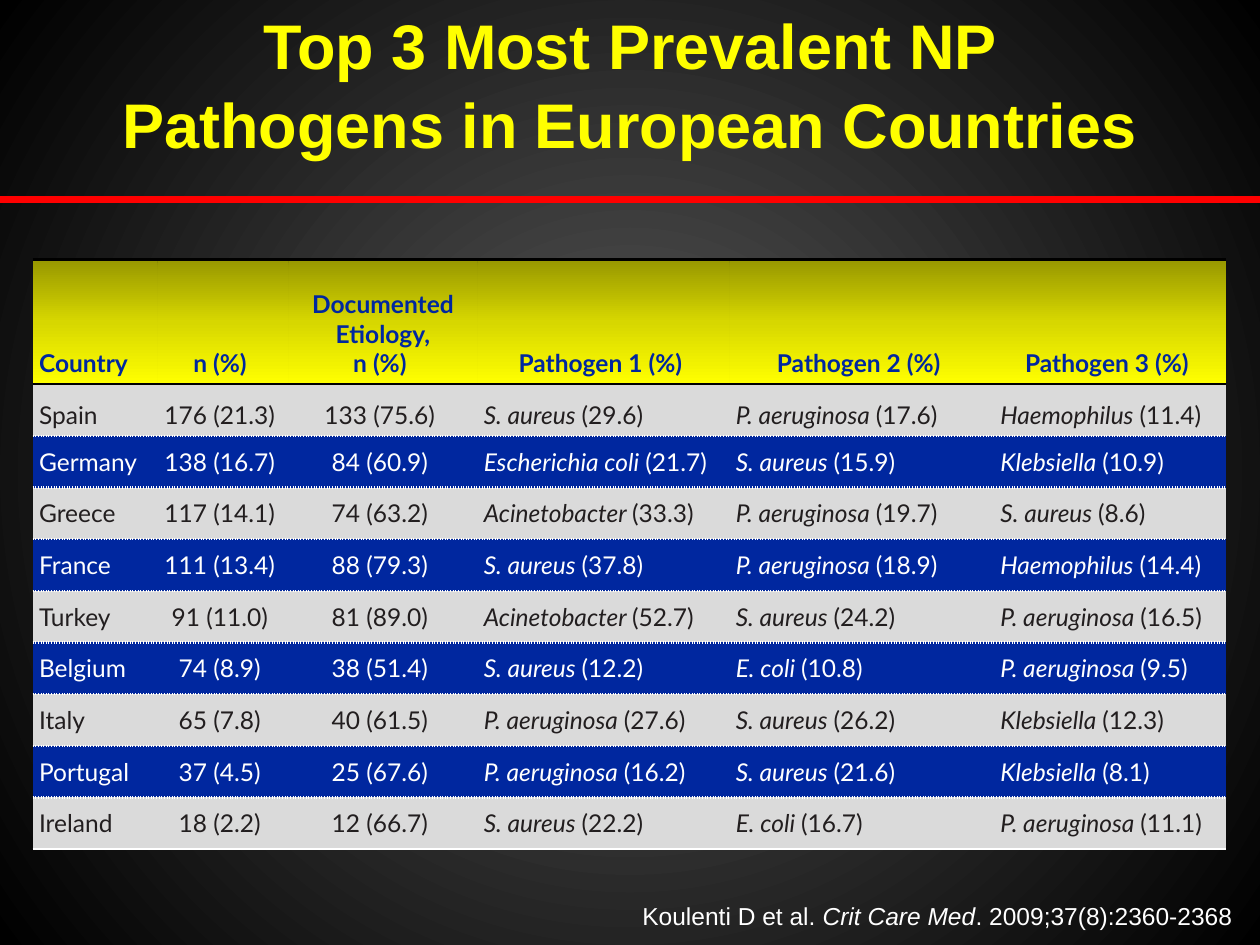
from lxml import etree
from pptx import Presentation
from pptx.dml.color import RGBColor
from pptx.enum.shapes import MSO_CONNECTOR
from pptx.enum.text import MSO_ANCHOR, MSO_AUTO_SIZE, PP_ALIGN
from pptx.oxml import parse_xml
from pptx.oxml.ns import nsdecls, qn
from pptx.util import Inches, Pt

LEFT, CENTER = PP_ALIGN.LEFT, PP_ALIGN.CENTER
BOTTOM, MIDDLE = MSO_ANCHOR.BOTTOM, MSO_ANCHOR.MIDDLE
NO_FIT = MSO_AUTO_SIZE.NONE
STRAIGHT = MSO_CONNECTOR.STRAIGHT

THEME = {
    "yellow": "FFFF00", "red": "FF0000", "white": "FFFFFF", "black": "000000",
    "blue": "00279F", "gray": "DADADA", "ink": "221E1F",
    "back": [(0, "595959"), (100, "000000")],
    "head": [(0, "979700"), (50, "D7D700"), (100, "FFFF00")],
    "font": "Arial", "grid_font": "Lato", "title": 36, "text": 14,
}

TITLE = "Top 3 Most Prevalent NP Pathogens in European Countries"
SOURCE = [("Koulenti D et al. ", False), ("Crit Care Med", True),
          (". 2009;37(8):2360-2368", False)]
HEAD = ["Country", "n (%)", "Documented Etiology,\nn (%)",
        "Pathogen 1 (%)", "Pathogen 2 (%)", "Pathogen 3 (%)"]
ROWS = [
    ("Spain", "176 (21.3)", "133 (75.6)",
     "S. aureus (29.6)", "P. aeruginosa (17.6)", "Haemophilus (11.4)"),
    ("Germany", "138 (16.7)", "84 (60.9)",
     "Escherichia coli (21.7)", "S. aureus (15.9)", "Klebsiella (10.9)"),
    ("Greece", "117 (14.1)", "74 (63.2)",
     "Acinetobacter (33.3)", "P. aeruginosa (19.7)", "S. aureus (8.6)"),
    ("France", "111 (13.4)", "88 (79.3)",
     "S. aureus (37.8)", "P. aeruginosa (18.9)", "Haemophilus (14.4)"),
    ("Turkey", "91 (11.0)", "81 (89.0)",
     "Acinetobacter (52.7)", "S. aureus (24.2)", "P. aeruginosa (16.5)"),
    ("Belgium", "74 (8.9)", "38 (51.4)",
     "S. aureus (12.2)", "E. coli (10.8)", "P. aeruginosa (9.5)"),
    ("Italy", "65 (7.8)", "40 (61.5)",
     "P. aeruginosa (27.6)", "S. aureus (26.2)", "Klebsiella (12.3)"),
    ("Portugal", "37 (4.5)", "25 (67.6)",
     "P. aeruginosa (16.2)", "S. aureus (21.6)", "Klebsiella (8.1)"),
    ("Ireland", "18 (2.2)", "12 (66.7)",
     "S. aureus (22.2)", "E. coli (16.7)", "P. aeruginosa (11.1)"),
]
COLS = [0.99, 1.04, 1.5, 2, 2.1, 1.84]
HEAD_H, ROW_H = 0.99, 0.41
NO_STYLE = "{2D5ABB26-0587-4C30-8999-92F81FD0307C}"


def box(*sizes):
    return [Inches(s) for s in sizes]


def blend(stops, shape):
    """Return a gradient fill; shape is the XML that gives its direction."""
    marks = "".join(f'<a:gs pos="{at * 1000}"><a:srgbClr val="{tint}"/></a:gs>'
                    for at, tint in stops)
    return parse_xml(f'<a:gradFill {nsdecls("a")} rotWithShape="1">'
                     f'<a:gsLst>{marks}</a:gsLst>{shape}</a:gradFill>')


def write(para, text, tint, size=THEME["text"], name=THEME["font"],
          bold=False, italic=False):
    run = para.add_run()
    run.text = text
    style = {"size": Pt(size), "name": name, "bold": bold, "italic": italic}
    for key, value in style.items():
        setattr(run.font, key, value)
    run.font.color.rgb = RGBColor.from_string(tint)


def rule(cell, spot, side, tint, dash):
    """Put a border on one side of a cell, at its place in the XML order."""
    cell._tc.get_or_add_tcPr().insert(spot, parse_xml(
        f'<a:{side} {nsdecls("a")} w="{Pt(1.5)}"><a:solidFill>'
        f'<a:srgbClr val="{tint}"/></a:solidFill>'
        f'<a:prstDash val="{dash}"/></a:{side}>'))


def fill_cell(cell, text, row, col):
    head = row == 0
    dark = row % 2 == 0
    cell.margin_left = cell.margin_right = Inches(0.05)
    cell.margin_top = cell.margin_bottom = Inches(0.05)
    cell.vertical_anchor = BOTTOM if row < 2 else MIDDLE
    if head:
        cell._tc.get_or_add_tcPr().append(
            blend(THEME["head"], '<a:lin ang="5400000" scaled="0"/>'))
        tint = THEME["blue"]
    else:
        cell.fill.solid()
        cell.fill.fore_color.rgb = RGBColor.from_string(
            THEME["blue" if dark else "gray"])
        tint = THEME["white" if dark else "ink"]

    solid, dots = (THEME["black"], "solid"), (THEME["white"], "sysDot")
    under = (THEME["white"], "solid") if row == len(ROWS) else dots
    rule(cell, 0, "lnT", *(solid if row < 2 else dots))
    rule(cell, 1, "lnB", *(solid if head else under))

    mid = col in (1, 2) or (head and col > 0)
    style = {"name": THEME["grid_font"], "bold": head}
    frame = cell.text_frame
    for n, line in enumerate(text.split("\n")):
        para = frame.add_paragraph() if n else frame.paragraphs[0]
        para.alignment = CENTER if mid else LEFT
        if col > 2 and not head:
            germ, _, share = line.rpartition(" ")
            write(para, germ + " ", tint, italic=True, **style)
            write(para, share, tint, **style)
        else:
            tail = " " if mid and line.endswith(")") else ""
            write(para, line + tail, tint, **style)


def main():
    deck = Presentation()
    deck.slide_width, deck.slide_height = box(10, 7.5)
    slide = deck.slides.add_slide(deck.slide_layouts[5])

    slide.background.fill.solid()
    base = slide._element.find(".//" + qn("p:bgPr"))
    base.replace(base[0], blend(
        THEME["back"], '<a:path path="circle"><a:fillToRect l="50000" '
        't="50000" r="50000" b="50000"/></a:path>'))

    bar = slide.shapes.add_connector(STRAIGHT, *box(0, 1.58, 10, 1.58))
    bar.line.color.rgb = RGBColor.from_string(THEME["red"])
    bar.line.width = Pt(4)
    etree.SubElement(bar._element.spPr, qn("a:effectLst"))

    title = slide.shapes.title
    title.left, title.top, title.width, title.height = box(0.75, 0.12, 8.5, 1.21)
    frame = title.text_frame
    frame.auto_size, frame.vertical_anchor = NO_FIT, BOTTOM
    para = frame.paragraphs[0]
    para.alignment, para.line_spacing = CENTER, 1.05
    write(para, TITLE, THEME["yellow"], THEME["title"], bold=True)

    high = HEAD_H + ROW_H * len(ROWS)
    table = slide.shapes.add_table(
        len(ROWS) + 1, len(COLS), *box(0.26, 2.06, sum(COLS), high)).table
    table._tbl.tblPr.find(qn("a:tableStyleId")).text = NO_STYLE
    table.horz_banding = False
    for col, wide in zip(table.columns, COLS):
        col.width = Inches(wide)
    for r, texts in enumerate([HEAD] + ROWS):
        table.rows[r].height = Inches(ROW_H if r else HEAD_H)
        for c, text in enumerate(texts):
            fill_cell(table.cell(r, c), text, r, c)

    frame = slide.shapes.add_textbox(*box(5, 7.09, 5, 0.39)).text_frame
    frame.word_wrap, frame.vertical_anchor = True, BOTTOM
    frame.margin_bottom = Inches(0.1)
    for text, italic in SOURCE:
        write(frame.paragraphs[0], text, THEME["white"], italic=italic)

    deck.save("out.pptx")


if __name__ == "__main__":
    main()
